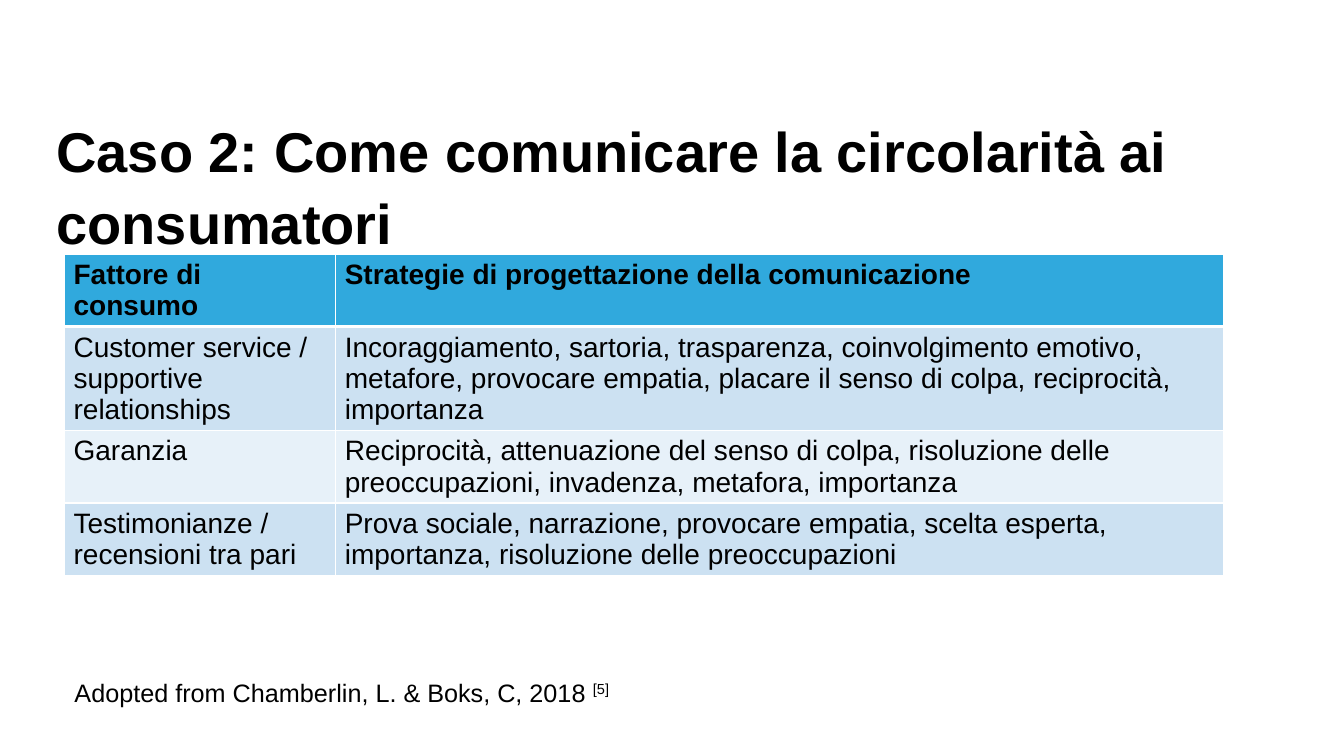
"""Build a slide with a table of communication strategies for circularity."""
import pptx
import pptx.dml.color
import pptx.enum.text
import pptx.oxml
import pptx.oxml.ns
import pptx.util

Inches = pptx.util.Inches
FONT = "Arial"
COLORS = {"text": "000000", "header": "30A9DD", "odd": "CCE1F2",
          "even": "E7F1F9", "border": "FFFFFF"}
TITLE = "Caso 2: Come comunicare la circolarità ai consumatori"
ROWS = [
    ("Fattore di consumo", "Strategie di progettazione della comunicazione"),
    ("Customer service / supportive relationships",
     "Incoraggiamento, sartoria, trasparenza, coinvolgimento emotivo, metafore, "
     "provocare empatia, placare il senso di colpa, reciprocità, importanza"),
    ("Garanzia",
     "Reciprocità, attenuazione del senso di colpa, risoluzione delle "
     "preoccupazioni, invadenza, metafora, importanza"),
    ("Testimonianze / recensioni tra pari",
     "Prova sociale, narrazione, provocare empatia, scelta esperta, importanza, "
     "risoluzione delle preoccupazioni"),
]
LINE_COUNTS = [2, 3, 2, 2]
COLUMN_WIDTHS = [2.69, 8.81]
LINE_HEIGHT, ROW_PADDING = 0.31, 0.1
SOURCE = "Adopted from Chamberlin, L. & Boks, C, 2018 "
REFERENCE = "[5]"


def format_runs(paragraph, size, bold=False):
    """Apply the slide's font to every run of a paragraph."""
    for run in paragraph.runs:
        run.font.name = FONT
        run.font.size = pptx.util.Pt(size)
        run.font.bold = bold
        run.font.color.rgb = pptx.dml.color.RGBColor.from_string(COLORS["text"])


def set_borders(cell, bottom_width, top_width):
    """Draw white borders, with widths in points, around a cell."""
    properties = cell._tc.get_or_add_tcPr()
    widths = {"lnL": 1, "lnR": 1, "lnT": top_width, "lnB": bottom_width}
    for index, (side, width) in enumerate(widths.items()):
        properties.insert(index, pptx.oxml.parse_xml(
            f'<a:{side} {pptx.oxml.ns.nsdecls("a")} w="{pptx.util.Pt(width)}">'
            f'<a:solidFill><a:srgbClr val="{COLORS["border"]}"/></a:solidFill></a:{side}>'))


def add_title(slide):
    """Fill and place the title placeholder."""
    title = slide.shapes.title
    title.left, title.top, title.width, title.height = map(Inches, (0.46, 1.06, 12.66, 0.71))
    frame = title.text_frame
    frame.text = TITLE
    frame.word_wrap = True
    frame.auto_size = pptx.enum.text.MSO_AUTO_SIZE.NONE
    frame.vertical_anchor = pptx.enum.text.MSO_ANCHOR.TOP
    paragraph = frame.paragraphs[0]
    paragraph.alignment = pptx.enum.text.PP_ALIGN.LEFT
    paragraph.line_spacing = 1.07
    format_runs(paragraph, 40, bold=True)


def add_strategy_table(slide):
    """Add the table of consumption factors and strategies."""
    heights = [count * LINE_HEIGHT + ROW_PADDING for count in LINE_COUNTS]
    table = slide.shapes.add_table(
        len(ROWS), len(COLUMN_WIDTHS), Inches(0.64), Inches(2.52),
        Inches(sum(COLUMN_WIDTHS)), Inches(sum(heights))).table
    for column, width in zip(table.columns, COLUMN_WIDTHS):
        column.width = Inches(width)
    for row_index, (texts, height) in enumerate(zip(ROWS, heights)):
        is_header = row_index == 0
        fill = "header" if is_header else ("odd" if row_index % 2 else "even")
        table.rows[row_index].height = Inches(height)
        for column_index, text in enumerate(texts):
            cell = table.cell(row_index, column_index)
            cell.text_frame.text = text
            format_runs(cell.text_frame.paragraphs[0], 20, bold=is_header)
            cell.margin_left = cell.margin_right = Inches(0.09)
            cell.fill.solid()
            cell.fill.fore_color.rgb = pptx.dml.color.RGBColor.from_string(COLORS[fill])
            set_borders(cell, 3 if is_header else 1, 3 if row_index == 1 else 1)


def add_source(slide):
    """Add the source line with its raised reference number."""
    box = slide.shapes.add_textbox(Inches(0.64), Inches(6.67), Inches(5.65), Inches(0.4))
    box.text_frame.word_wrap = True
    paragraph = box.text_frame.paragraphs[0]
    paragraph.text = SOURCE
    reference = paragraph.add_run()
    reference.text = REFERENCE
    format_runs(paragraph, 18)
    reference.font._element.set("baseline", "30000")


def main():
    """Build and save the presentation."""
    presentation = pptx.Presentation()
    presentation.slide_width = Inches(13.33)
    presentation.slide_height = Inches(7.5)
    slide = presentation.slides.add_slide(presentation.slide_layouts[5])
    add_title(slide)
    add_strategy_table(slide)
    add_source(slide)
    presentation.save("out.pptx")


if __name__ == "__main__":
    main()
